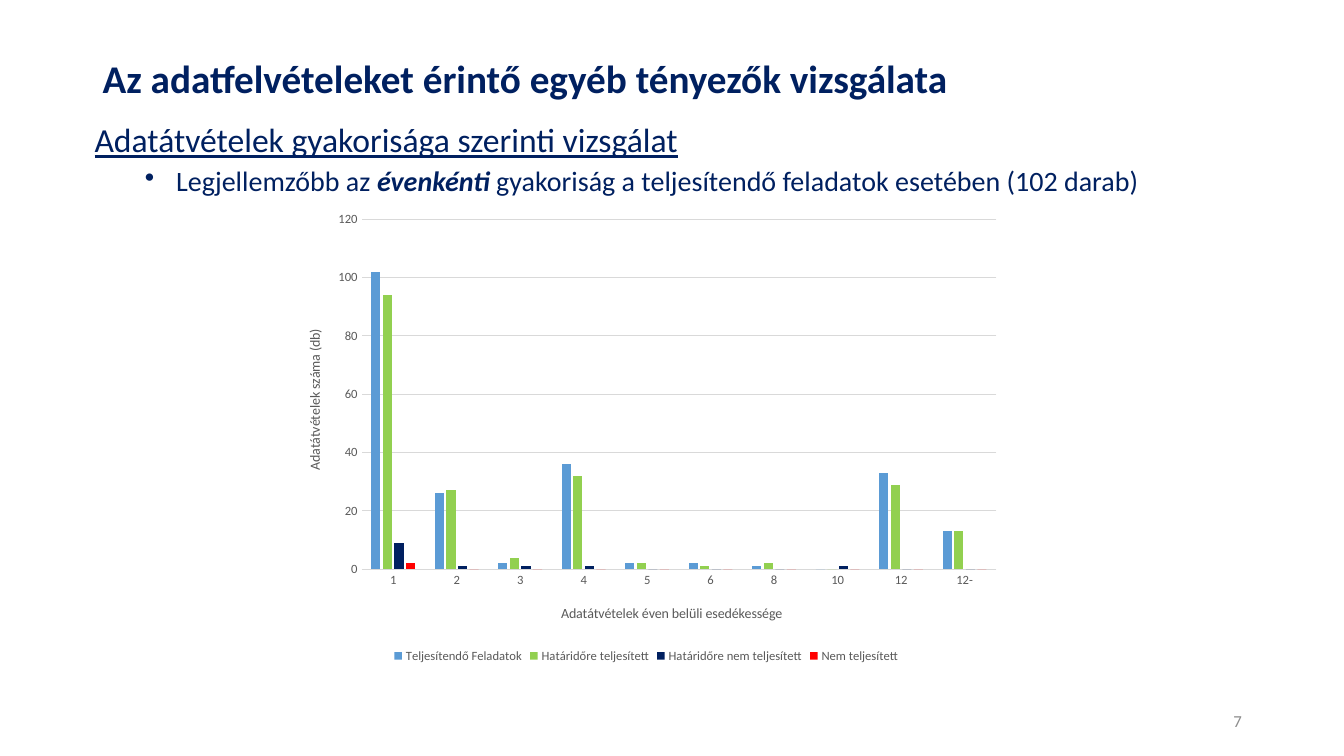
import pptx
import pptx.util
import pptx.dml.color
import pptx.enum.text
import pptx.enum.chart
import pptx.chart.data
import pptx.oxml
import pptx.oxml.ns

Pt = pptx.util.Pt
Align = pptx.enum.text.PP_ALIGN
Anchor = pptx.enum.text.MSO_ANCHOR
Kind = pptx.enum.chart

THEME = {
    "font": "Calibri", "navy": "002060", "page": "8C8C8C",
    "label": "595959", "grid": "D9D9D9",
    "title": 28, "head": 24, "body": 20, "foot": 12, "axis": 10, "tick": 9,
}

TEXTS = [
    {"at": (66.24, 28.8, 828, 58.3), "anchor": Anchor.MIDDLE, "color": "navy", "lines": [
        {"size": "title", "space": 0.9, "runs": [
            ("Az adatfelvételeket érintő egyéb tényezők vizsgálata", {"bold": True})]}]},
    {"at": (60.5, 85, 828, 342.7), "anchor": Anchor.TOP, "color": "navy", "lines": [
        {"size": "head", "space": 0.9, "runs": [
            ("Adatátvételek gyakorisága szerinti vizsgálat", {"underline": True})]},
        {"size": "body", "space": 0.9, "before": 5, "bullet": (58.3, -22.3), "runs": [
            ("Legjellemzőbb az ", {}),
            ("évenkénti ", {"bold": True, "italic": True}),
            ("gyakoriság a teljesítendő feladatok esetében (102 darab)", {})]}]},
    {"at": (678.2, 500.4, 216, 28.8), "anchor": Anchor.MIDDLE, "color": "page", "lines": [
        {"size": "foot", "align": Align.RIGHT, "runs": [("7", {})]}]},
]

CHART = {
    "at": (200.9, 143.3, 521.3, 333.4),
    "plot": (0.11, 0.04, 0.87, 0.75),
    "cats": ["1", "2", "3", "4", "5", "6", "8", "10", "12", "12-"],
    "rows": [
        ("Teljesítendő Feladatok", "5B9BD5", (102, 26, 2, 36, 2, 2, 1, 0, 33, 13)),
        ("Határidőre teljesített", "92D050", (94, 27, 4, 32, 2, 1, 2, 0, 29, 13)),
        ("Határidőre nem teljesített", "002060", (9, 1, 1, 1, 0, 0, 0, 1, 0, 0)),
        ("Nem teljesített", "FF0000", (2, 0, 0, 0, 0, 0, 0, 0, 0, 0)),
    ],
    "cat_title": ("Adatátvételek éven belüli esedékessége", (0.38, 0.86)),
    "val_title": ("Adatátvételek száma (db)", (0.03, 0.27)),
}


def rgb(code):
    return pptx.dml.color.RGBColor.from_string(code)


def apply(thing, form):
    for name, value in form.items():
        setattr(thing, name, value)


def style(font, size, color, **more):
    apply(font, {"name": THEME["font"], "size": Pt(THEME[size]), **more})
    font.color.rgb = rgb(THEME[color])


def bullet(para, left, hang):
    props = para._p.get_or_add_pPr()
    apply_xml = {"lvl": "1", "marL": str(Pt(left)), "indent": str(Pt(hang))}
    for name, value in apply_xml.items():
        props.set(name, value)
    mark = f'<a:buChar {pptx.oxml.ns.nsdecls("a")} char="•"/>'
    props.append(pptx.oxml.parse_xml(mark))


def add_text(slide, item):
    frame = slide.shapes.add_textbox(*map(Pt, item["at"])).text_frame
    apply(frame, {"word_wrap": True, "vertical_anchor": item["anchor"]})
    for i, line in enumerate(item["lines"]):
        para = frame.add_paragraph() if i else frame.paragraphs[0]
        if "bullet" in line:
            bullet(para, *line["bullet"])
        apply(para, {"alignment": line.get("align", Align.LEFT),
                     "line_spacing": line.get("space", 1.0),
                     "space_before": Pt(line.get("before", 0))})
        for words, form in line["runs"]:
            run = para.add_run()
            run.text = words
            style(run.font, line["size"], item["color"], **form)


def place(node, spot, index):
    for old in node.findall(pptx.oxml.ns.qn("c:layout")):
        node.remove(old)
    keys = ("x", "y", "w", "h")[:len(spot)]
    inner = '<c:layoutTarget val="inner"/>' if len(spot) == 4 else ""
    modes = "".join(f'<c:{key}Mode val="edge"/>' for key in keys[:2])
    sizes = "".join(f'<c:{key} val="{num}"/>' for key, num in zip(keys, spot))
    node.insert(index, pptx.oxml.parse_xml(
        f'<c:layout {pptx.oxml.ns.nsdecls("c")}><c:manualLayout>'
        f'{inner}{modes}{sizes}</c:manualLayout></c:layout>'))


def set_line(line):
    line.color.rgb = rgb(THEME["grid"])
    line.width = Pt(0.75)


def set_axis(axis, words, spot):
    none = Kind.XL_TICK_MARK.NONE
    apply(axis, {"major_tick_mark": none, "minor_tick_mark": none})
    style(axis.tick_labels.font, "tick", "label")
    title = axis.axis_title
    para = title.text_frame.paragraphs[0]
    run = para.add_run()
    run.text = words
    style(run.font, "axis", "label", bold=False)
    place(title._element, spot, 1)


def add_chart(slide, item):
    data = pptx.chart.data.CategoryChartData()
    data.categories = item["cats"]
    for name, color, vals in item["rows"]:
        data.add_series(name, vals)
    chart = slide.shapes.add_chart(
        Kind.XL_CHART_TYPE.COLUMN_CLUSTERED, *map(Pt, item["at"]), data).chart
    apply(chart, {"has_title": False, "has_legend": True})
    style(chart.font, "axis", "label")
    apply(chart.legend, {"position": Kind.XL_LEGEND_POSITION.BOTTOM,
                         "include_in_layout": False})
    style(chart.legend.font, "tick", "label")
    plot = chart.plots[0]
    apply(plot, {"gap_width": 219, "overlap": -27, "vary_by_categories": False})
    for bars, (name, color, vals) in zip(plot.series, item["rows"]):
        bars.format.fill.solid()
        bars.format.fill.fore_color.rgb = rgb(color)
    cat, val = chart.category_axis, chart.value_axis
    set_axis(cat, *item["cat_title"])
    set_axis(val, *item["val_title"])
    apply(val, {"minimum_scale": 0, "maximum_scale": 120, "major_unit": 20,
                "has_major_gridlines": True})
    set_line(cat.format.line)
    set_line(val.major_gridlines.format.line)
    val.format.line.fill.background()
    place(chart._chartSpace.chart.plotArea, item["plot"], 0)


def main():
    deck = pptx.Presentation()
    apply(deck, {"slide_width": Pt(960), "slide_height": Pt(540)})
    slide = deck.slides.add_slide(deck.slide_layouts[6])
    for item in TEXTS:
        add_text(slide, item)
    add_chart(slide, CHART)
    deck.save("out.pptx")


if __name__ == "__main__":
    main()
